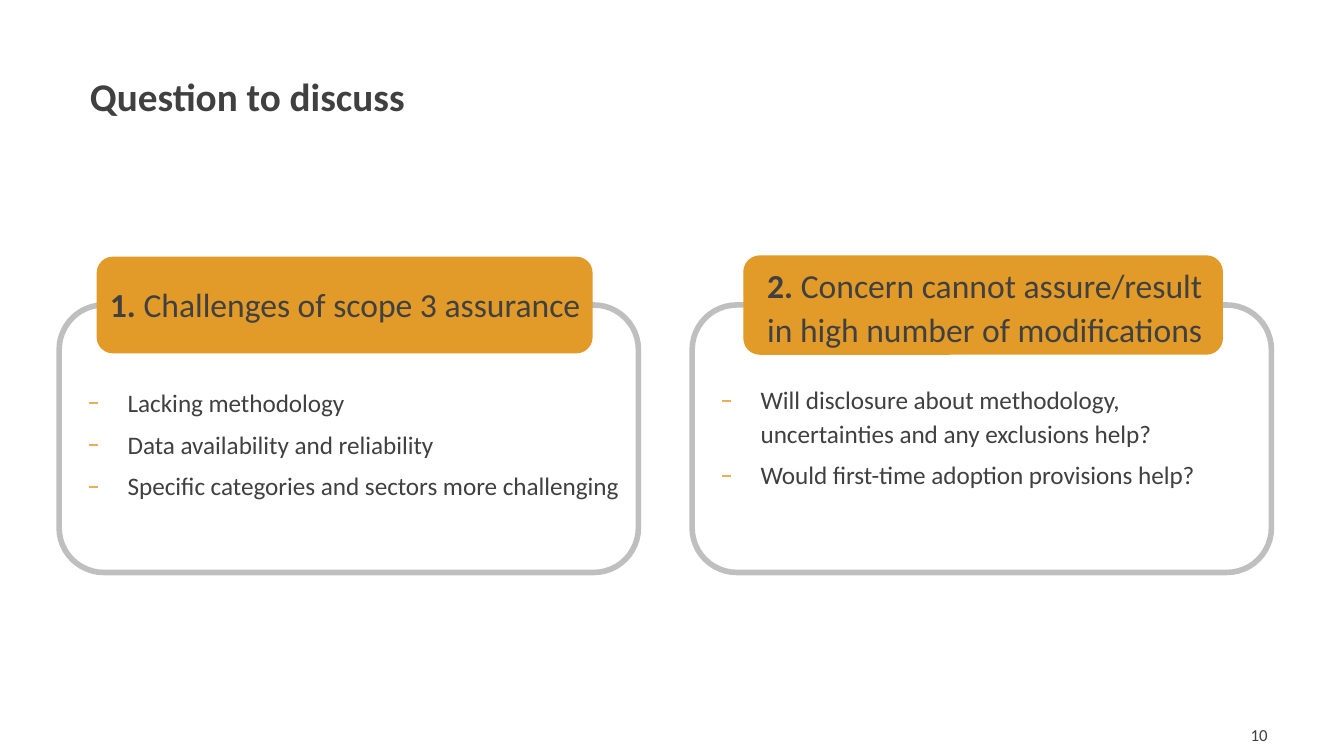
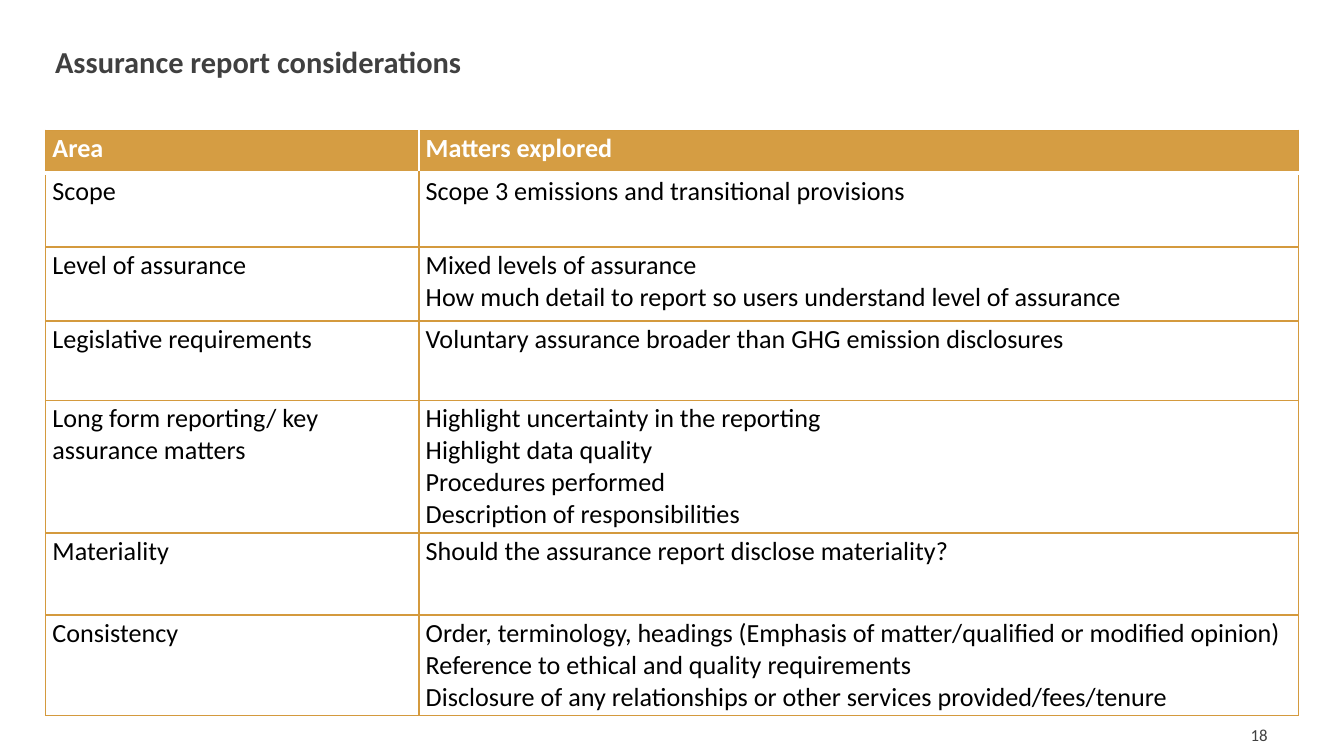
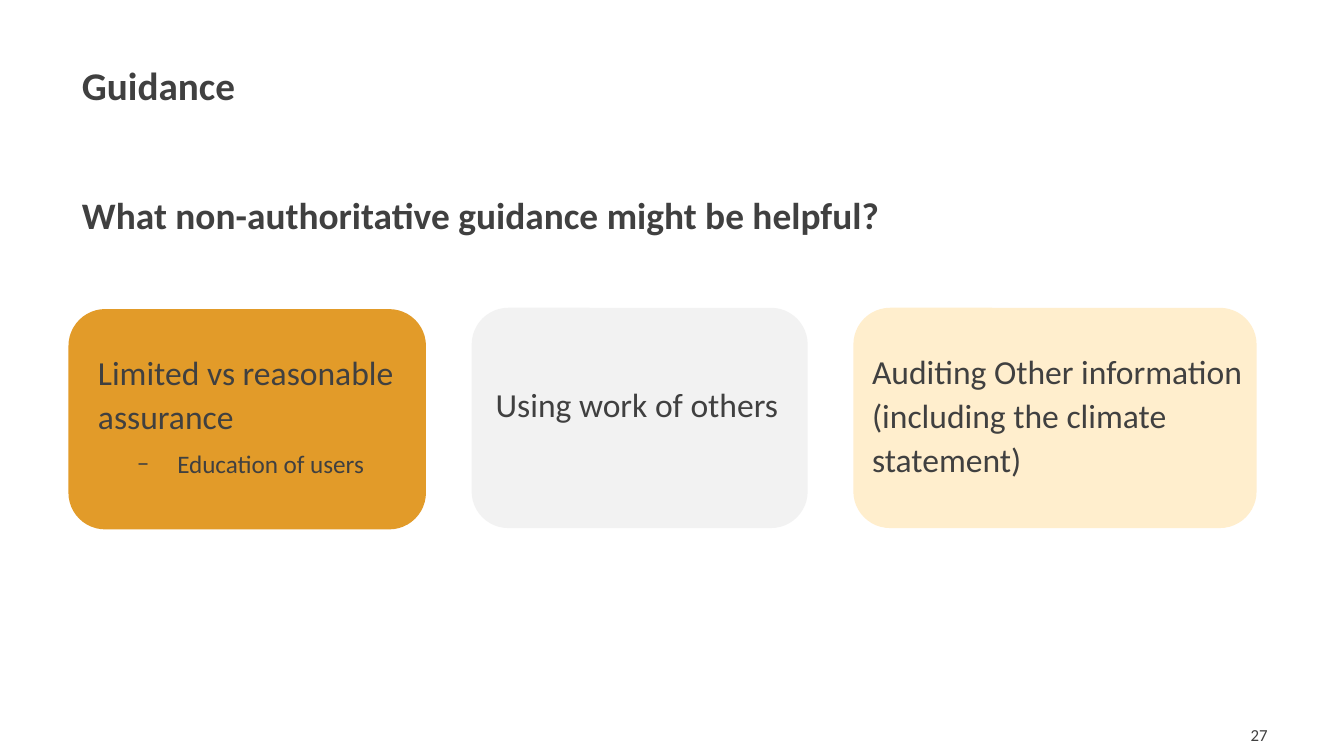
import lxml.etree
import pptx
import pptx.dml.color
import pptx.enum.shapes
import pptx.enum.text
import pptx.oxml.ns
import pptx.util

Pt = pptx.util.Pt
Align = pptx.enum.text.PP_ALIGN
Anchor = pptx.enum.text.MSO_ANCHOR

FONT = "Calibri"
INK, GOLD, EDGE = "404040", "E29B29", "BFBFBF"
HEAD, RULE, WHITE, BLACK = "D59D43", "D49A3E", "FFFFFF", "000000"
BIG, SMALL = 18, 13.5

TOPICS = [
    {"frame": (31.7, 163.4, 310.3, 143.3), "pill": (51.8, 137.5, 265.7, 51.8),
     "label": (51.8, 146.2, 273, 41.8), "list": (18.7, 202.3, 333.4, 112.3),
     "mark": "1. ", "name": "Challenges of scope 3 assurance",
     "items": ["Lacking methodology", "Data availability and reliability",
               "Specific categories and sectors more challenging"]},
    {"frame": (370.8, 163.4, 310.3, 143.3), "pill": (398.2, 136.8, 257, 53.3),
     "label": (403.9, 136, 250.6, 53.3), "list": (357.8, 200.9, 314.6, 71.3),
     "mark": "2. ",
     "name": "Concern cannot assure/result in high number of modifications",
     "items": ["Will disclosure about methodology, uncertainties and any exclusions help?",
               "Would first-time adoption provisions help?"]},
]

COLS = [200, 471]
ROWS = [
    (23, "Area", ["Matters explored"]),
    (39.6, "Scope", ["Scope 3 emissions and transitional provisions"]),
    (39.6, "Level of assurance", [
        "Mixed levels of assurance",
        "How much detail to report so users understand level of assurance"]),
    (42.5, "Legislative requirements",
     ["Voluntary assurance broader than GHG emission disclosures"]),
    (52, "Long form reporting/ key assurance matters", [
        "Highlight uncertainty in the reporting", "Highlight data quality",
        "Procedures performed", "Description of responsibilities"]),
    (44, "Materiality", ["Should the assurance report disclose materiality?"]),
    (44, "Consistency", [
        "Order, terminology, headings (Emphasis of matter/qualified or modified opinion)",
        "Reference to ethical and quality requirements",
        "Disclosure of any relationships or other services provided/fees/tenure"]),
]

ASK = "What non-authoritative guidance might be helpful?"
CARDS = [
    {"card": (36.7, 165.6, 191.5, 118), "fill": GOLD, "text": (45.4, 182.9, 182.9, 83.5),
     "name": "Limited vs reasonable assurance", "items": ["Education of users"]},
    {"card": (252.7, 164.9, 180, 118), "fill": "F2F2F2", "text": (258.5, 200.2, 182.9, 43.2),
     "name": "Using work of others", "items": []},
    {"card": (457.2, 164.9, 216, 118), "fill": "FFEECD", "text": (460.1, 182.2, 214.6, 112.3),
     "name": "Auditing Other information (including the climate statement)", "items": []},
]


def paint(code):
    return pptx.dml.color.RGBColor.from_string(code)


def node(parent, tag, **attrs):
    return lxml.etree.SubElement(parent, pptx.oxml.ns.qn("a:" + tag), attrs)


def place(shape, box):
    shape.left, shape.top, shape.width, shape.height = map(Pt, box)


def frame_of(shape, anchor=Anchor.TOP):
    frame = shape.text_frame
    frame.word_wrap = True
    frame.auto_size = pptx.enum.text.MSO_AUTO_SIZE.NONE
    frame.vertical_anchor = anchor
    return frame


def add_run(para, text, size, color=INK, bold=False):
    run = para.add_run()
    run.text = text
    run.font.name, run.font.size, run.font.bold = FONT, Pt(size), bold
    run.font.color.rgb = paint(color)


def add_para(frame, first, lines=1.1, align=Align.LEFT, dash=None):
    para = frame.paragraphs[0] if first else frame.add_paragraph()
    para.alignment, para.line_spacing = align, lines
    para.space_before, para.space_after = Pt(0 if first else 1.5), Pt(3)
    props = para._p.get_or_add_pPr()
    if dash:
        para.level = 1
        props.set("marL", str(Pt(42.5)))
        props.set("indent", str(Pt(-21.6)))
        node(node(props, "buClr"), "srgbClr", val=dash)
        node(props, "buFont", typeface=FONT)
        node(props, "buChar", char="–")
    else:
        props.set("marL", "0")
        props.set("indent", "0")
        node(props, "buNone")
    return para


def add_list(frame, items, dash, first=True):
    for rank, item in enumerate(items):
        add_run(add_para(frame, first and rank == 0, dash=dash), item, SMALL)


def text_box(slide, box, anchor=Anchor.TOP):
    return frame_of(slide.shapes.add_textbox(*map(Pt, box)), anchor)


def add_round(slide, box, fill=None):
    kind = pptx.enum.shapes.MSO_SHAPE.ROUNDED_RECTANGLE
    shape = slide.shapes.add_shape(kind, *map(Pt, box))
    shape.shadow.inherit = False
    if fill:
        shape.fill.solid()
        shape.fill.fore_color.rgb = paint(fill)
        shape.line.fill.background()
    else:
        shape.fill.background()
        shape.line.color.rgb = paint(EDGE)
        shape.line.width = Pt(3)


def new_slide(deck, layout, title, left, top, number, size=21, lines=1.1):
    slide = deck.slides.add_slide(deck.slide_layouts[layout])
    shape = slide.shapes.title
    place(shape, (left, top, 246.2, 38.2))
    add_run(add_para(frame_of(shape), True, lines), title, size, bold=True)
    foot = text_box(slide, (524.2, 383, 162, 21.6), Anchor.MIDDLE)
    add_run(add_para(foot, True, 1.0, Align.RIGHT), number, 9)
    return slide


def add_edge(cell, side, color, width):
    line = node(cell._tc.get_or_add_tcPr(), "ln" + side, w=str(Pt(width)))
    node(node(line, "solidFill"), "srgbClr", val=color)


def fill_cell(cell, row, col, lines):
    top = row == 0
    cell.margin_left = cell.margin_right = Pt(3.6)
    cell.margin_top = cell.margin_bottom = Pt(1.44)
    edges = {side: (RULE, 0.8) for side in "LRTB"}
    if top:
        edges["R" if col == 0 else "L"] = (WHITE, 1)
        edges["B"] = (WHITE, 2.13)
    elif row == 1:
        edges["T"] = (WHITE, 2.13)
    for side, (color, width) in edges.items():
        add_edge(cell, side, color, width)
    if top:
        cell.fill.solid()
        cell.fill.fore_color.rgb = paint(HEAD)
    else:
        cell.fill.background()
    frame = cell.text_frame
    for rank, line in enumerate(lines):
        para = frame.paragraphs[0] if rank == 0 else frame.add_paragraph()
        add_run(para, line, 14, WHITE if top else BLACK, top)


def build_topics(deck):
    slide = new_slide(deck, 3, "Question to discuss", 41, 32.4, "10")
    for spot, topic in enumerate(TOPICS, 1):
        add_round(slide, topic["frame"])
        add_round(slide, topic["pill"], GOLD)
        para = add_para(text_box(slide, topic["label"]), True)
        add_run(para, topic["mark"], BIG, bold=True)
        add_run(para, topic["name"], BIG)
        body = slide.placeholders[spot]
        place(body, topic["list"])
        add_list(frame_of(body), topic["items"], GOLD)


def build_table(deck):
    slide = new_slide(deck, 5, "Assurance report considerations", 22.3, 21.6, "18", 16.3, 0.9)
    high = sum(row[0] for row in ROWS)
    box = (24.5, 69.8, sum(COLS), high)
    table = slide.shapes.add_table(len(ROWS), len(COLS), *map(Pt, box)).table
    table.horz_banding = False
    for col, wide in enumerate(COLS):
        table.columns[col].width = Pt(wide)
    for row, (tall, area, points) in enumerate(ROWS):
        table.rows[row].height = Pt(tall)
        for col, lines in enumerate(([area], points)):
            fill_cell(table.cell(row, col), row, col, lines)


def build_cards(deck):
    slide = new_slide(deck, 1, "Guidance", 36.7, 26.6, "27")
    body = slide.placeholders[1]
    place(body, (36.7, 97.2, 610.6, 45.4))
    add_run(add_para(frame_of(body), True, align=Align.JUSTIFY), ASK, 20, bold=True)
    for card in CARDS:
        add_round(slide, card["card"], card["fill"])
        frame = text_box(slide, card["text"])
        add_run(add_para(frame, True), card["name"], BIG)
        add_list(frame, card["items"], INK, False)


def main():
    deck = pptx.Presentation()
    deck.slide_width, deck.slide_height = Pt(720), Pt(405)
    build_topics(deck)
    build_table(deck)
    build_cards(deck)
    deck.save("out.pptx")


if __name__ == "__main__":
    main()
